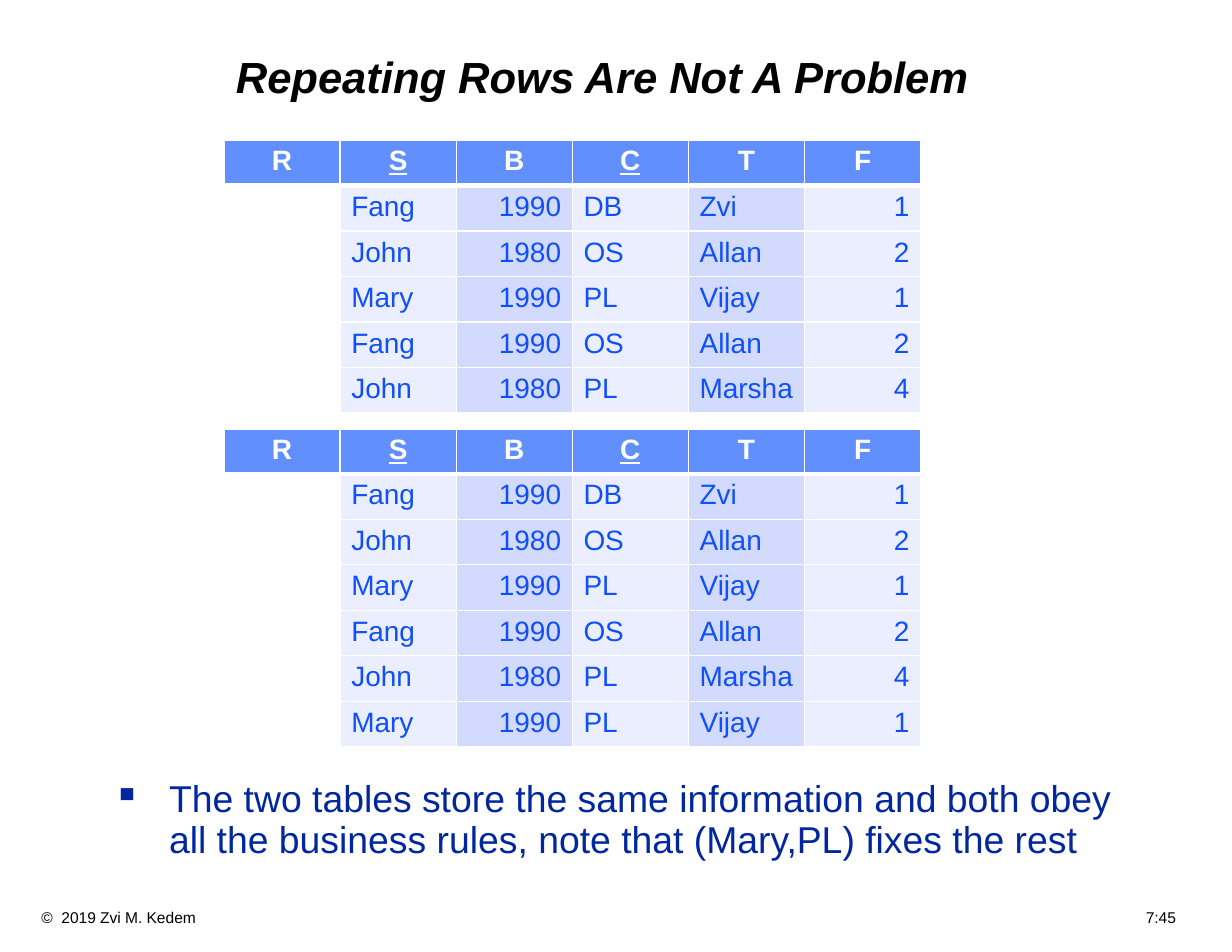
from lxml.etree import SubElement
from pptx import Presentation
from pptx.dml.color import RGBColor
from pptx.enum.text import MSO_ANCHOR, PP_ALIGN
from pptx.oxml.ns import qn
from pptx.util import Inches, Pt

WHITE, BLUE, NAVY = "FFFFFF", "114FFB", "00279F"
HEADER, LIGHT, SHADED = "618FFD", "EAEEFF", "D2DBFE"
LEFT, CENTER, RIGHT = PP_ALIGN.LEFT, PP_ALIGN.CENTER, PP_ALIGN.RIGHT
COLUMN, ROW = 6.22 / 6, 2.44 / 6


def style(para, size, color, align=LEFT, bold=False):
    para.alignment = align
    font = para.font
    font.name, font.size, font.bold = "Arial", Pt(size), bold
    font.color.rgb = RGBColor.from_string(color)


def add_text(text, left, top, width, height, size, color, align=LEFT, bold=False):
    box = page.shapes.add_textbox(*map(Inches, (left, top, width, height)))
    frame = box.text_frame
    frame.word_wrap = True
    frame.margin_left = frame.margin_right = Inches(0.11)
    frame.margin_top = frame.margin_bottom = Inches(0.06)
    frame.text = text
    style(frame.paragraphs[0], size, color, align, bold)
    return frame


deck = Presentation()
deck.slide_width, deck.slide_height = Inches(11), Inches(8.5)
page = deck.slides.add_slide(deck.slide_layouts[6])

# Footer: credit on the left, page number at a right tab
footer = add_text("©  2019 Zvi M. Kedem\t7:45", 0, 8.06, 11, 0.27, 10, "000000")
footer.margin_left, footer.margin_top = Inches(0.37), Inches(0.05)
tabs = SubElement(footer.paragraphs[0]._p.get_or_add_pPr(), qn("a:tabLst"))
SubElement(tabs, qn("a:tab"), pos=str(Inches(10.13)), algn="r")
footer.paragraphs[0]._p.pPr.insert(0, tabs)

# Title
title = add_text("Repeating Rows Are Not A Problem", 0.75, 0.25, 9.25, 0.92,
                 28, "000000", CENTER, True)
title.vertical_anchor = MSO_ANCHOR.MIDDLE
title.paragraphs[0].font.italic = True
title.paragraphs[0].line_spacing = 0.9

# Bulleted conclusion
body = add_text("The two tables store the same information and both obey all the "
                "business rules, note that (Mary,PL) fixes the rest",
                0.75, 6.91, 9.33, 1.09, 24, NAVY)
para = body.paragraphs[0]
para.line_spacing = 0.9
props = para._p.get_or_add_pPr()
props.set("marL", str(Inches(0.65)))
props.set("indent", str(Inches(-0.5)))
bullet = SubElement(props, qn("a:buChar"), char="▪")
props.find(qn("a:lnSpc")).addnext(bullet)

# Two tables: the second repeats one row
header = ["R", "S", "B", "C", "T", "F"]
records = [
    ["", "Fang", "1990", "DB", "Zvi", "1"],
    ["", "John", "1980", "OS", "Allan", "2"],
    ["", "Mary", "1990", "PL", "Vijay", "1"],
    ["", "Fang", "1990", "OS", "Allan", "2"],
    ["", "John", "1980", "PL", "Marsha", "4"],
]
column_fills = [WHITE, LIGHT, SHADED, LIGHT, SHADED, LIGHT]
column_aligns = [LEFT, LEFT, RIGHT, LEFT, LEFT, RIGHT]

for top, height, header_height, rows in [
    (1.25, 2.44, ROW, [header] + records),
    (3.83, 2.84, 0.16, [header] + records + [records[2]]),
]:
    holder = page.shapes.add_table(len(rows), len(header), Inches(2), Inches(top),
                                   Inches(6.22), Inches(height))
    table = holder.table
    table.horz_banding = False
    for column in table.columns:
        column.width = Inches(COLUMN)
    for r, values in enumerate(rows):
        table.rows[r].height = Inches(ROW if r else header_height)
        for c, value in enumerate(values):
            cell = table.cell(r, c)
            cell.text = value
            para = cell.text_frame.paragraphs[0]
            if r == 0:
                style(para, 18, WHITE, CENTER, True)
                para.font.underline = value in ("S", "C")
            else:
                style(para, 18, BLUE, column_aligns[c])
            # White borders, thicker under the header
            widths = {"L": 1, "R": 1, "T": 3 if r == 1 else 1, "B": 1 if r else 3}
            for side, width in widths.items():
                line = SubElement(cell._tc.get_or_add_tcPr(), qn("a:ln" + side),
                                  w=str(Pt(width)))
                SubElement(SubElement(line, qn("a:solidFill")), qn("a:srgbClr"), val=WHITE)
            cell.fill.solid()
            cell.fill.fore_color.rgb = RGBColor.from_string(column_fills[c] if r else HEADER)
    holder.height = Inches(height)

deck.save("out.pptx")
